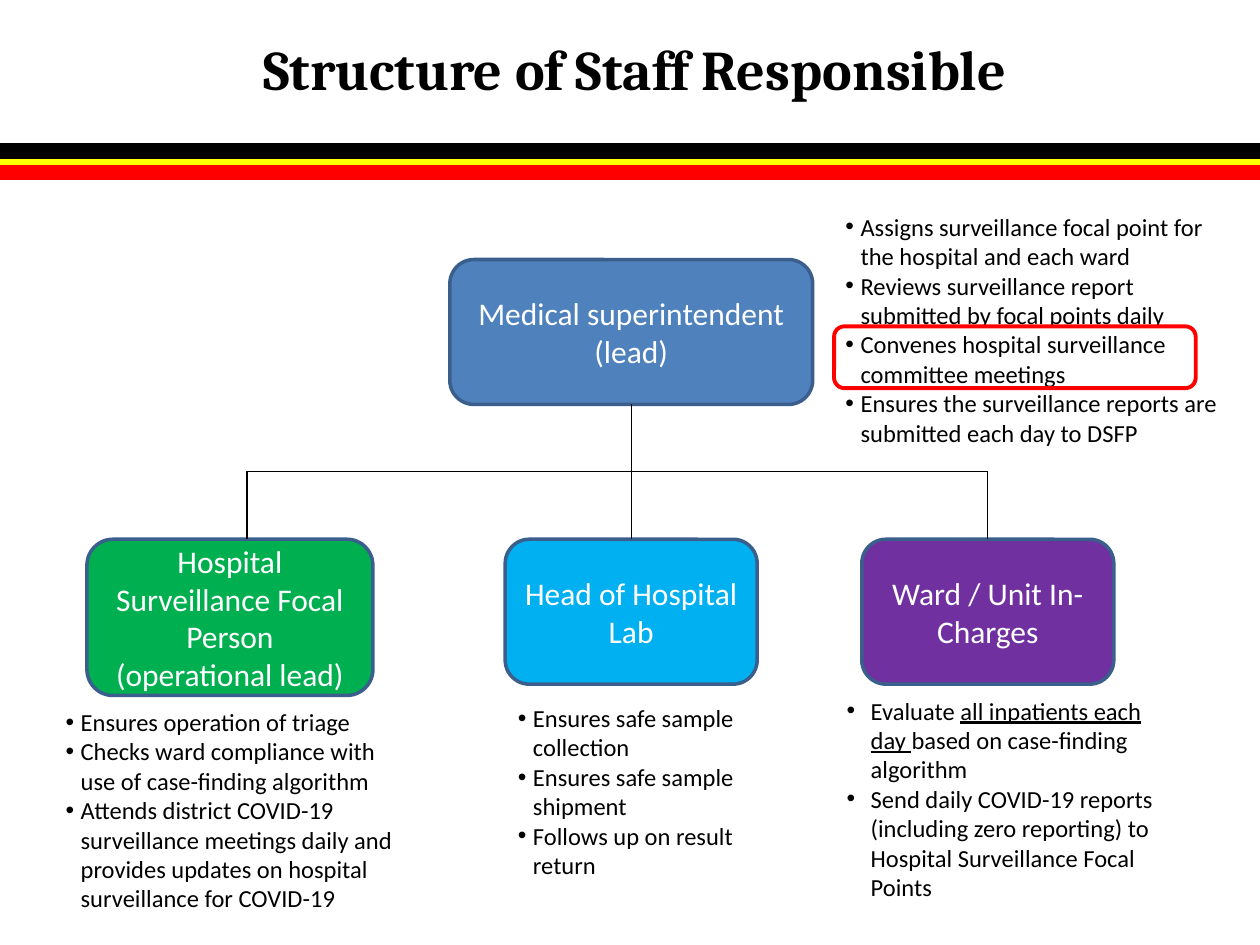
import dataclasses

import lxml.etree
import pptx
import pptx.dml.color
import pptx.enum.shapes
import pptx.enum.text
import pptx.oxml.ns
import pptx.util

CELL = 0.1  # the slide is a grid of 100 columns by 75 rows
COLS, ROWS = 100, 75
SHAPES = pptx.enum.shapes.MSO_SHAPE
ALIGN = pptx.enum.text.PP_ALIGN
ANCHOR = pptx.enum.text.MSO_ANCHOR
AUTOSIZE = pptx.enum.text.MSO_AUTO_SIZE


@dataclasses.dataclass(frozen=True)
class Theme:
    black: str = "000000"
    white: str = "FFFFFF"
    yellow: str = "FFFF00"
    red: str = "FF0000"
    blue: str = "4F81BD"
    green: str = "00B050"
    cyan: str = "00B0F0"
    purple: str = "7030A0"
    border: str = "3A5F8C"
    heading_font: str = "Cambria"
    body_font: str = "Calibri"
    title_size: float = 32
    role_size: float = 18
    list_size: float = 14
    stripe_width: float = 9
    border_width: float = 2
    frame_width: float = 2.25
    link_width: float = 0.75


THEME = Theme()


@dataclasses.dataclass(frozen=True)
class Area:
    col: float
    row: float
    cols: float
    rows: float

    @property
    def center(self) -> float:
        return self.col + self.cols / 2


@dataclasses.dataclass(frozen=True)
class Role:
    label: str
    area: Area
    fill: str


@dataclasses.dataclass(frozen=True)
class Duties:
    """A bulleted list; a tuple item holds runs, every second one underlined."""
    area: Area
    indent: float
    items: tuple


LEAD = Role("Medical superintendent (lead)", Area(35.7, 20.6, 28.8, 11.5), THEME.blue)
FOCAL = Role("Hospital Surveillance Focal Person (operational lead)",
             Area(6.9, 42.8, 22.7, 12.4), THEME.green)
LAB = Role("Head of Hospital Lab", Area(40.1, 42.8, 20, 11.5), THEME.cyan)
WARD = Role("Ward / Unit In-Charges", Area(68.4, 42.8, 20, 11.5), THEME.purple)

DUTIES = (
    Duties(Area(66.1, 16.3, 32.7, 19.9), 1.2, (
        "Assigns surveillance focal point for the hospital and each ward",
        "Reviews surveillance report submitted by focal points daily",
        "Convenes hospital surveillance committee meetings",
        "Ensures the surveillance reports are submitted each day to DSFP")),
    Duties(Area(4.2, 55.6, 28.1, 17.5), 1.2, (
        "Ensures operation of triage",
        "Checks ward compliance with use of case-finding algorithm",
        "Attends district COVID-19 surveillance meetings daily and provides "
        "updates on hospital surveillance for COVID-19")),
    Duties(Area(40.1, 55.3, 20, 15.1), 1.2, (
        "Ensures safe sample collection",
        "Ensures safe sample shipment",
        "Follows up on result return")),
    Duties(Area(66.2, 54.7, 26.9, 17.5), 1.9, (
        ("Evaluate ", "all inpatients each day ", "based on case-finding algorithm"),
        "Send daily COVID-19 reports (including zero reporting) to "
        "Hospital Surveillance Focal Points")),
)
STRIPES = ((12.9, THEME.yellow), (13.7, THEME.red), (12, THEME.black))
FRAME = Area(66.2, 25.9, 28.7, 4.9)
BUS_ROW = 37.4
FOCAL_LINK_COL = 19.6


def cells(n: float) -> int:
    return pptx.util.Inches(round(n * CELL, 3))


def rgb(color: str) -> pptx.dml.color.RGBColor:
    return pptx.dml.color.RGBColor.from_string(color)


def assign(target, values: dict) -> None:
    for name, value in values.items():
        setattr(target, name, value)


def place(sp, area: Area) -> None:
    assign(sp, {"left": cells(area.col), "top": cells(area.row),
                "width": cells(area.cols), "height": cells(area.rows)})


def add_run(p, text: str, font: str, size: float, color: str, **style) -> None:
    r = p.add_run()
    r.text = text
    assign(r.font, {"name": font, "size": pptx.util.Pt(size), **style})
    r.font.color.rgb = rgb(color)


def add_line(s, start: tuple, end: tuple, color: str, width: float):
    line = s.shapes.add_connector(pptx.enum.shapes.MSO_CONNECTOR.STRAIGHT,
                                  *(cells(n) for n in start + end))
    line.line.color.rgb = rgb(color)
    line.line.width = pptx.util.Pt(width)
    lxml.etree.SubElement(line._element.spPr, pptx.oxml.ns.qn("a:effectLst"))
    return line


def add_rounded(s, area: Area, color: str, width: float):
    sp = s.shapes.add_shape(SHAPES.ROUNDED_RECTANGLE, 0, 0, 0, 0)
    place(sp, area)
    sp.shadow.inherit = False
    sp.fill.background()
    sp.line.color.rgb = rgb(color)
    sp.line.width = pptx.util.Pt(width)
    return sp


def add_role(s, role: Role):
    sp = add_rounded(s, role.area, THEME.border, THEME.border_width)
    sp.fill.solid()
    sp.fill.fore_color.rgb = rgb(role.fill)
    tf = sp.text_frame
    assign(tf, {"word_wrap": True, "vertical_anchor": ANCHOR.MIDDLE})
    p = tf.paragraphs[0]
    p.alignment = ALIGN.CENTER
    add_run(p, role.label, THEME.body_font, THEME.role_size, THEME.white)
    return sp


def set_bullet(p, indent: float) -> None:
    pPr = p._p.get_or_add_pPr()
    pPr.set("marL", str(cells(indent)))
    pPr.set("indent", str(-cells(indent)))
    for tag, name, value in (("a:buFont", "typeface", "Arial"), ("a:buChar", "char", "•")):
        lxml.etree.SubElement(pPr, pptx.oxml.ns.qn(tag)).set(name, value)


def fill_duties(sp, duties: Duties) -> None:
    place(sp, duties.area)
    tf = sp.text_frame
    assign(tf, {"word_wrap": True, "vertical_anchor": ANCHOR.TOP,
                "auto_size": AUTOSIZE.SHAPE_TO_FIT_TEXT})
    for i, item in enumerate(duties.items):
        p = tf.add_paragraph() if i else tf.paragraphs[0]
        assign(p, {"alignment": ALIGN.LEFT, "space_before": pptx.util.Pt(0)})
        set_bullet(p, duties.indent)
        for j, text in enumerate((item,) if isinstance(item, str) else item):
            add_run(p, text, THEME.body_font, THEME.list_size, THEME.black,
                    bold=False, underline=j % 2 == 1)


def fill_title(sp, text: str) -> None:
    place(sp, Area(3.3, 0.8, 94.2, 9.2))
    sp.text_frame.vertical_anchor = ANCHOR.MIDDLE
    p = sp.text_frame.paragraphs[0]
    p.alignment = ALIGN.CENTER
    add_run(p, text, THEME.heading_font, THEME.title_size, THEME.black, bold=True)


def add_links(s, lead, lab, ward) -> None:
    def link(start: tuple, end: tuple):
        return add_line(s, start, end, THEME.black, THEME.link_width)

    mid, right = LAB.area.center, WARD.area.center
    link((mid, LEAD.area.row + LEAD.area.rows), (mid, BUS_ROW)).begin_connect(lead, 2)
    link((right, BUS_ROW), (FOCAL_LINK_COL, BUS_ROW))
    link((FOCAL_LINK_COL, BUS_ROW), (FOCAL_LINK_COL, FOCAL.area.row))
    for col, sp in ((mid, lab), (right, ward)):
        link((col, BUS_ROW), (col, LAB.area.row)).end_connect(sp, 0)


def main() -> None:
    prs = pptx.Presentation()
    assign(prs, {"slide_width": cells(COLS), "slide_height": cells(ROWS)})
    comparison = prs.slide_layouts[4]  # a title and four bodies
    s = prs.slides.add_slide(comparison)
    title, *bodies = s.placeholders
    for row, color in STRIPES:
        add_line(s, (0, row), (COLS, row), color, THEME.stripe_width)
    fill_title(title, "Structure of Staff Responsible")
    lead, _, lab, ward = [add_role(s, role) for role in (LEAD, FOCAL, LAB, WARD)]
    add_links(s, lead, lab, ward)
    for sp, duties in zip(bodies, DUTIES):
        fill_duties(sp, duties)
    add_rounded(s, FRAME, THEME.red, THEME.frame_width)
    prs.save("out.pptx")


if __name__ == "__main__":
    main()
